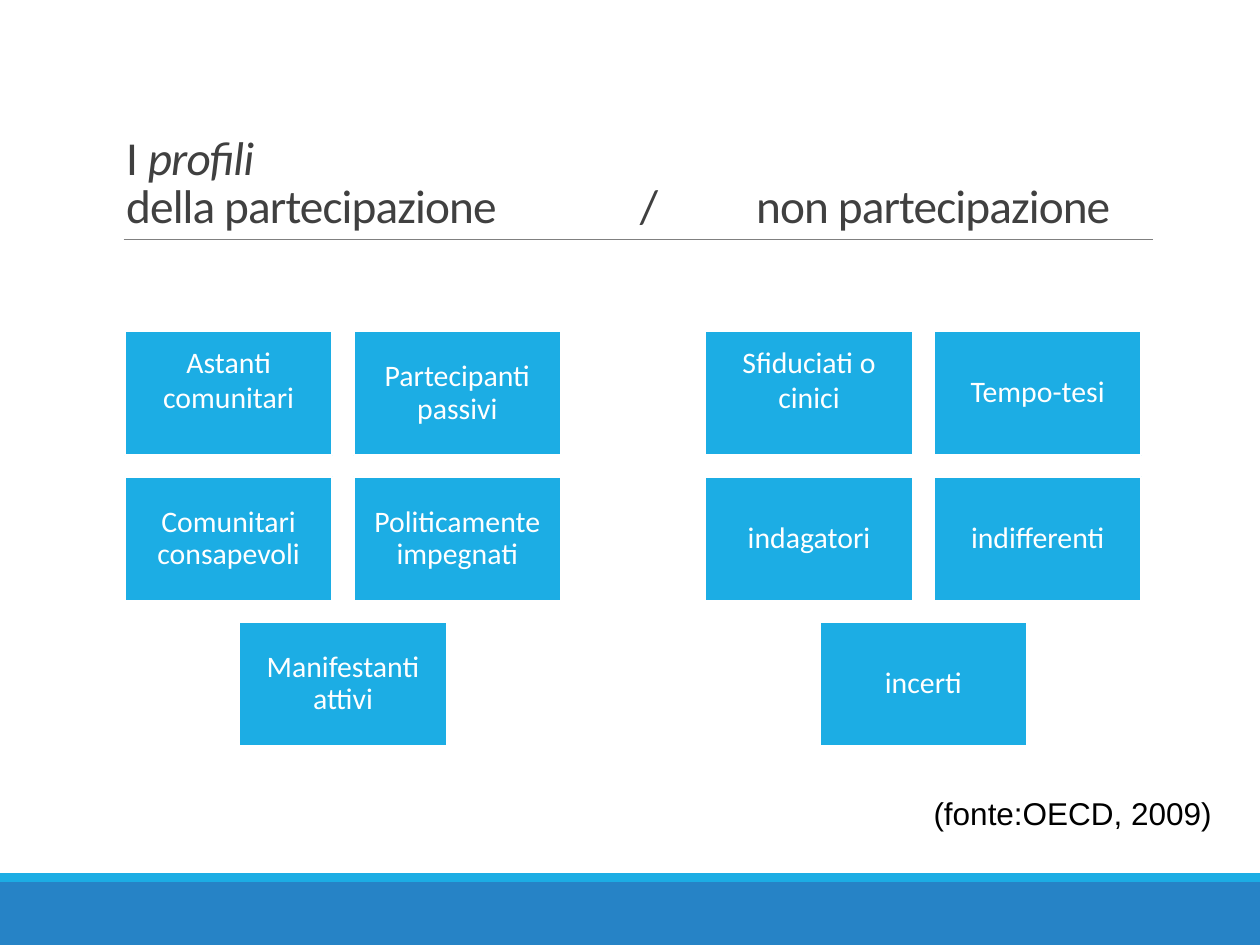
"""Build the slide on profiles of participation and non-participation."""
from lxml import etree
from pptx import Presentation
from pptx import util as u
from pptx.dml.color import RGBColor
from pptx.enum import shapes, text
from pptx.oxml.ns import qn

BLUE = RGBColor(0x26, 0x83, 0xC6)
SKY = RGBColor(0x1C, 0xAD, 0xE4)
GRAY = RGBColor(0x80, 0x80, 0x80)
DARK = RGBColor(0x40, 0x40, 0x40)
WHITE = RGBColor(0xFF, 0xFF, 0xFF)
BLACK = RGBColor(0, 0, 0)


def style(item, **look):
    for key, value in look.items():
        setattr(item, key, value)


def block(left, top, width, height, color):
    box = slide.shapes.add_shape(shapes.MSO_SHAPE.RECTANGLE, u.Cm(left), u.Cm(top),
                                 u.Cm(width), u.Cm(height))
    box.shadow.inherit = False
    box.fill.solid()
    box.fill.fore_color.rgb = color
    box.line.fill.background()
    return box


deck = Presentation()
style(deck, slide_width=u.Cm(25.4), slide_height=u.Cm(19.05))
slide = deck.slides.add_slide(deck.slide_layouts[5])

block(0, 17.78, 25.4, 1.27, BLUE)
block(0, 17.6, 25.4, 0.18, SKY)

rule = slide.shapes.add_connector(shapes.MSO_CONNECTOR.STRAIGHT, u.Cm(2.49), u.Cm(4.83),
                                  u.Cm(23.24), u.Cm(4.83))
rule.line.color.rgb = GRAY
rule.line.width = u.Pt(0.5)
etree.SubElement(rule._element.spPr, qn("a:effectLst"))

title = slide.shapes.title
style(title, left=u.Cm(2.29), top=u.Cm(0.79), width=u.Cm(20.96), height=u.Cm(4.04))
style(title.text_frame, vertical_anchor=text.MSO_ANCHOR.BOTTOM, word_wrap=True,
      auto_size=text.MSO_AUTO_SIZE.NONE)
para = title.text_frame.paragraphs[0]
style(para, alignment=text.PP_ALIGN.LEFT, line_spacing=0.85)
tabs = etree.SubElement(para._p.get_or_add_pPr(), qn("a:tabLst"))
for stop in (10.16, 12.7):
    etree.SubElement(tabs, qn("a:tab"), pos=str(u.Cm(stop)), algn="l")
for words, slant in (("I ", False), ("profili", True),
                     ("della partecipazione \t / \tnon partecipazione", False)):
    if words.startswith("della"):
        para.add_line_break()
    run = para.add_run()
    run.text = words
    style(run.font, name="Calibri", size=u.Pt(27), italic=slant)
    run.font.color.rgb = DARK
    run._r.get_or_add_rPr().set("spc", "-50")

spots = ((0, 0), (1, 0), (0, 1), (1, 1), (0.5, 2))
groups = (
    (2.52, ("Astanti comunitari", "Partecipanti passivi", "Comunitari consapevoli",
            "Politicamente impegnati", "Manifestanti attivi")),
    (14.22, ("Sfiduciati o cinici", "Tempo-tesi", "indagatori", "indifferenti", "incerti")),
)
for left, names in groups:
    for name, (col, row) in zip(names, spots):
        first = col == row == 0
        box = block(left + col * 4.61, 6.68 + row * 2.93, 4.18, 2.5, SKY)
        box.line.color.rgb = WHITE
        box.line.width = u.Pt(1.25)
        frame = box.text_frame
        style(frame, word_wrap=True, vertical_anchor=text.MSO_ANCHOR.MIDDLE,
              margin_left=u.Cm(0.18), margin_right=u.Cm(0.18), margin_top=u.Cm(0.18),
              margin_bottom=u.Cm(0.75 if first else 0.18))
        para = frame.paragraphs[0]
        para.text = name
        style(para, alignment=text.PP_ALIGN.CENTER, line_spacing=1.0 if first else 0.9)
        style(para.font, name="Calibri", size=u.Pt(17))
        para.font.color.rgb = WHITE

note = slide.shapes.add_textbox(u.Cm(18.57), u.Cm(15.88), u.Cm(6.17), u.Cm(1.02))
style(note.text_frame, word_wrap=False, auto_size=text.MSO_AUTO_SIZE.SHAPE_TO_FIT_TEXT)
para = note.text_frame.paragraphs[0]
para.text = "(fonte:OECD, 2009)"
style(para.font, name="Arial", size=u.Pt(18))
para.font.color.rgb = BLACK

deck.save("out.pptx")
